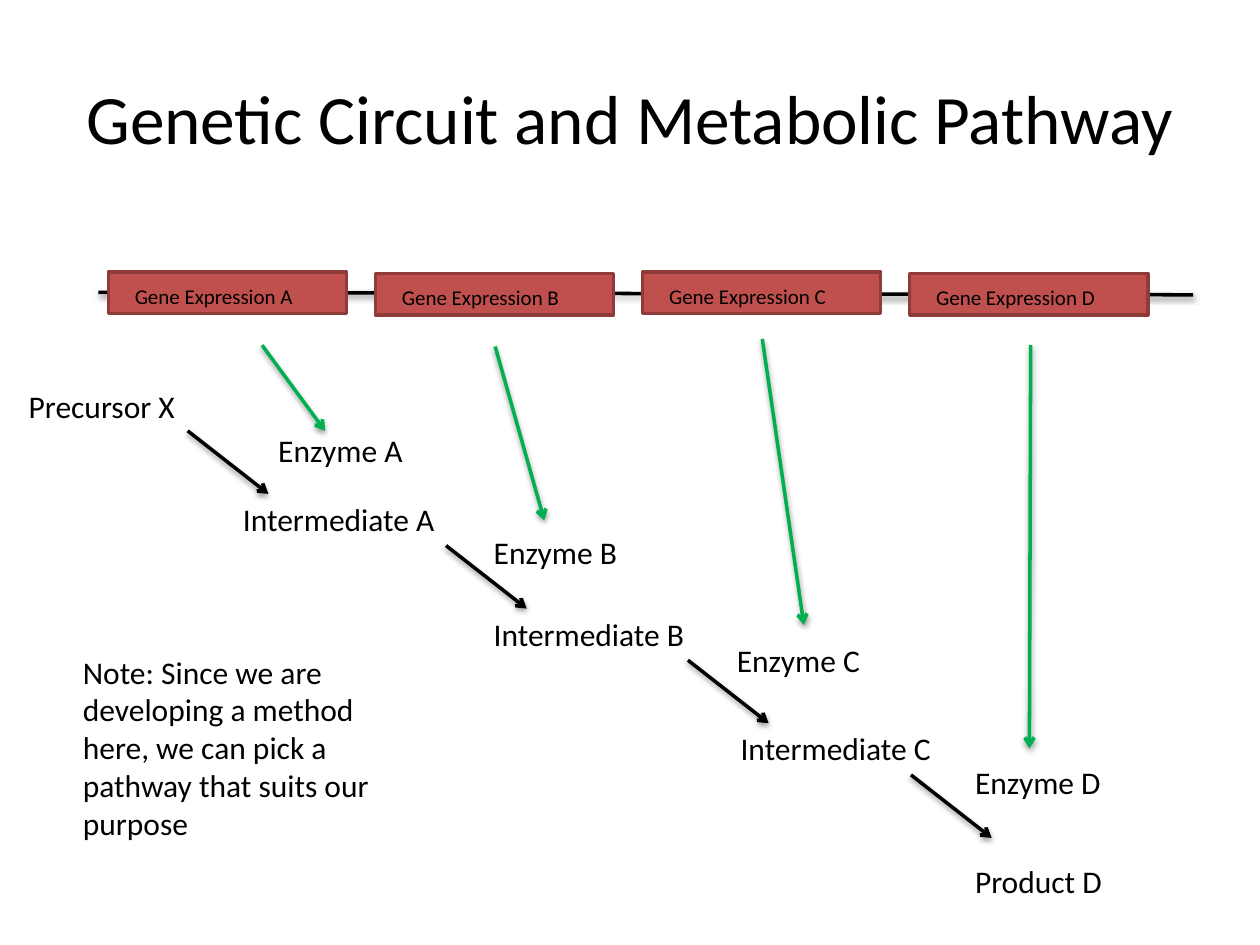
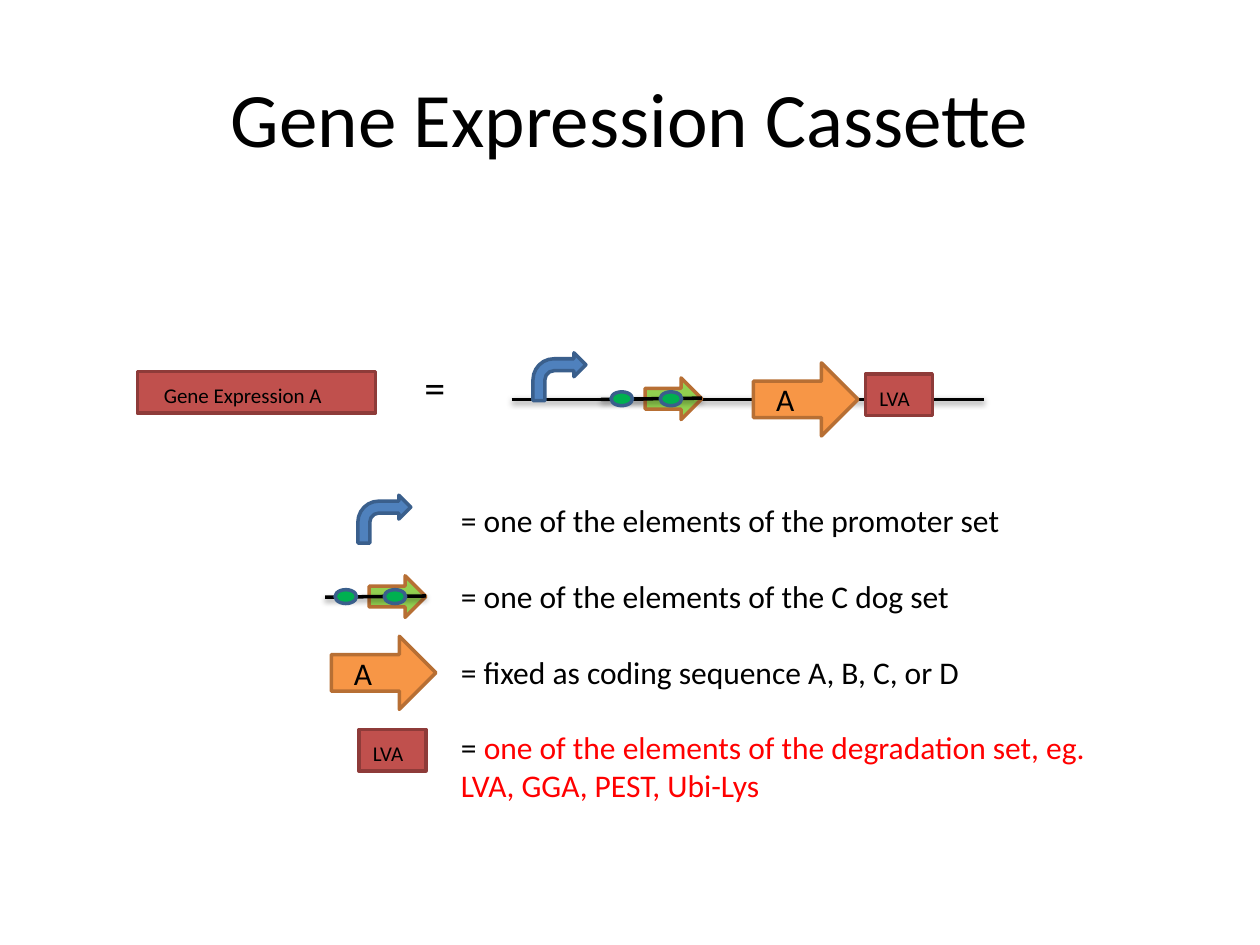
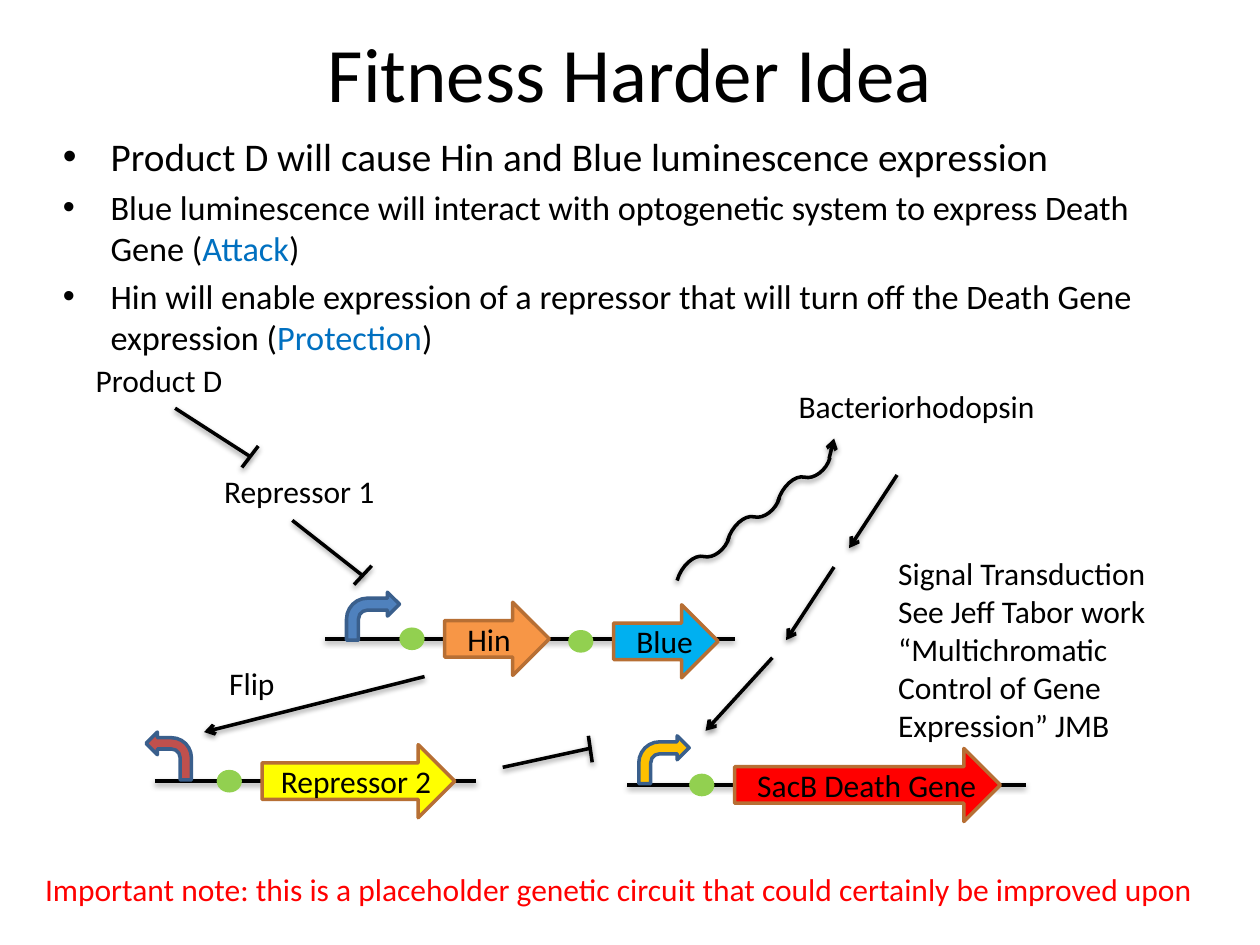
from lxml.etree import SubElement
from pptx import Presentation
from pptx.dml.color import RGBColor
from pptx.enum.shapes import MSO_CONNECTOR, MSO_SHAPE
from pptx.enum.text import MSO_ANCHOR, PP_ALIGN
from pptx.oxml.ns import qn
from pptx.util import Inches, Pt

FONT = "Calibri"
BLACK = RGBColor(0x00, 0x00, 0x00)
RED = RGBColor(0xFF, 0x00, 0x00)
BRICK = RGBColor(0xC0, 0x50, 0x4D)
BRICK_EDGE = RGBColor(0x8E, 0x3B, 0x39)
ORANGE = RGBColor(0xF7, 0x96, 0x46)
ORANGE_EDGE = RGBColor(0xB7, 0x6F, 0x34)
BLUE = RGBColor(0x4F, 0x81, 0xBD)
BLUE_EDGE = RGBColor(0x3A, 0x5F, 0x8C)
SKY = RGBColor(0x00, 0xB0, 0xF0)
LINK_BLUE = RGBColor(0x00, 0x70, 0xC0)
GREEN = RGBColor(0x00, 0xB0, 0x50)
LIME = RGBColor(0x92, 0xD0, 0x50)
YELLOW = RGBColor(0xFF, 0xFF, 0x00)
GOLD = RGBColor(0xFF, 0xC0, 0x00)


def add_box(slide, left, top, width, height, text="", kind=None, fill=None,
            edge=None, size=18, color=BLACK, inset=0.1, inset_top=0.0):
    """Add a text box, or a filled preset shape with a left-aligned label if kind is given."""
    place = [Inches(v) for v in (left, top, width, height)]
    if kind is None:
        box = slide.shapes.add_textbox(*place)
    else:
        box = slide.shapes.add_shape(kind, *place)
        box.shadow.inherit = False
        box.fill.solid()
        box.fill.fore_color.rgb = fill
        if edge is None:
            box.line.fill.background()
        else:
            box.line.color.rgb = edge
            box.line.width = Pt(2)
        frame = box.text_frame
        frame.vertical_anchor = MSO_ANCHOR.MIDDLE
        frame.margin_left, frame.margin_top = Inches(inset), Inches(inset_top)
        frame.margin_right = frame.margin_bottom = 0
    box.text_frame.word_wrap = True
    if text:
        box.text_frame.text = text
        for paragraph in box.text_frame.paragraphs:
            paragraph.alignment = PP_ALIGN.LEFT
            paragraph.font.name = FONT
            paragraph.font.size = Pt(size)
            paragraph.font.color.rgb = color
    return box


def add_line(slide, x1, y1, x2, y2, color=BLACK, arrow=False, kind=MSO_CONNECTOR.STRAIGHT):
    """Add a connector that keeps the soft shadow of the theme."""
    line = slide.shapes.add_connector(kind, Inches(x1), Inches(y1), Inches(x2), Inches(y2))
    line.line.color.rgb = color
    line.line.width = Pt(2)
    if arrow:
        SubElement(line.line._get_or_add_ln(), qn("a:tailEnd"), type="arrow")
    return line


prs = Presentation()
prs.slide_width, prs.slide_height = Inches(10), Inches(7.5)

slides = []
for title, top, size in [
    ("Genetic Circuit and Metabolic Pathway", 0.3, 39.6),
    ("Gene Expression Cassette", 0.3, 44),
    ("Fitness Harder Idea", -0.06, 44),
]:
    slide = prs.slides.add_slide(prs.slide_layouts[6])
    heading = add_box(slide, 0.5, top, 9, 1.25, title, size=size)
    heading.text_frame.vertical_anchor = MSO_ANCHOR.MIDDLE
    heading.text_frame.paragraphs[0].alignment = PP_ALIGN.CENTER
    slides.append(slide)
pathway, cassette, fitness = slides

gene_style = dict(kind=MSO_SHAPE.RECTANGLE, fill=BRICK, edge=BRICK_EDGE, size=12, inset_top=0.05)
coding_style = dict(kind=MSO_SHAPE.RIGHT_ARROW, edge=ORANGE_EDGE)
promoter_style = dict(kind=MSO_SHAPE.BENT_ARROW, edge=BLUE_EDGE)

# Slide 1: genes, their enzymes, and the chain of products
add_line(pathway, 0.78, 2.32, 9.47, 2.34)
for i, letter in enumerate("ABCD"):
    add_box(pathway, 0.86 + 2.12 * i, 2.16 + 0.01 * (i % 2), 1.89, 0.33,
            f"Gene Expression {letter}", inset=0.21, **gene_style)

for text, left, top in [
    ("Precursor X", 0.13, 3.02),
    ("Intermediate A", 1.83, 3.92),
    ("Intermediate B", 3.82, 4.83),
    ("Intermediate C", 5.78, 5.74),
    ("Product D", 7.64, 6.79),
    ("Enzyme A", 2.11, 3.37),
    ("Enzyme B", 3.82, 4.18),
    ("Enzyme C", 5.75, 5.04),
    ("Enzyme D", 7.64, 6.01),
]:
    add_box(pathway, left, top, 1.86, 0.4, text)

for i, x in enumerate([1.49, 3.54, 5.46, 7.23]):
    y = 3.42 + 0.91 * i
    add_line(pathway, x, y, x + 0.64, y + 0.5, arrow=True)
for ends in [(2.08, 2.74, 2.58, 3.42), (3.93, 2.75, 4.32, 4.13),
             (6.05, 2.69, 6.38, 4.96), (8.18, 2.74, 8.17, 5.94)]:
    add_line(pathway, *ends, color=GREEN, arrow=True)
add_box(pathway, 0.56, 5.13, 2.5, 1.62,
        "Note: Since we are developing a method here, we can pick a pathway that suits our purpose")

# Slide 2: the cassette, and the same parts again as a legend
add_box(cassette, 1.09, 2.95, 1.89, 0.33, "Gene Expression A", inset=0.21, **gene_style)
add_box(cassette, 3.27, 2.82, 0.51, 0.5, "=", size=24)
add_line(cassette, 4.06, 3.17, 7.81, 3.17)
for promoter, dog, coding, tag in [
    ((4.23, 2.8), (4.77, 3.17), (5.98, 2.88), (6.87, 2.97)),
    ((2.84, 3.93), (2.58, 4.74), (2.63, 5.05), (2.85, 5.79)),
]:
    add_box(cassette, *promoter, 0.42, 0.38, fill=BLUE, **promoter_style)
    x, y = dog
    add_box(cassette, x + 0.35, y - 0.17, 0.45, 0.33, fill=LIME, **coding_style)
    add_line(cassette, x, y, x + 0.8, y - 0.01)
    for shift in (0.47, 0.08):
        add_box(cassette, x + shift, y - 0.06, 0.17, 0.11,
                kind=MSO_SHAPE.OVAL, fill=GREEN, edge=BLUE_EDGE)
    add_box(cassette, *coding, 0.83, 0.58, "A", fill=ORANGE, inset=0.18, **coding_style)
    add_box(cassette, *tag, 0.53, 0.33, "LVA", inset=0.11, **gene_style)

legend = add_box(cassette, 3.56, 3.93, 5.31, 2.52, "\n".join([
    "= one of the elements of the promoter set",
    "= one of the elements of the C dog set",
    "= fixed as coding sequence A, B, C, or D",
    "= ",
]))
for paragraph in legend.text_frame.paragraphs:
    paragraph.space_after = Pt(21.6)
degradation = paragraph.add_run()
degradation.text = "one of the elements of the degradation set, eg. LVA, GGA, PEST, Ubi-Lys"
degradation.font.color.rgb = RED

# Slide 3: bullets above the circuit
bullets = add_box(fitness, 0.4, 1, 9, 1.59, "\n".join([
    "Product D will cause Hin and Blue luminescence expression",
    "Blue luminescence will interact with optogenetic system to express Death Gene (",
    "Hin will enable expression of a repressor that will turn off the Death Gene expression (",
]))
for paragraph, size, keyword in zip(bullets.text_frame.paragraphs, (22.4, 19.6, 19.6),
                                    ("", "Attack", "Protection")):
    paragraph.font.size = Pt(size)
    paragraph.space_before = Pt(size * 0.2)
    properties = paragraph._p.get_or_add_pPr()
    properties.set("marL", str(Inches(0.38)))
    properties.set("indent", str(Inches(-0.38)))
    bullet_font = SubElement(properties, qn("a:buFont"), typeface="Arial")
    bullet = SubElement(properties, qn("a:buChar"), char="•")
    properties.find(qn("a:defRPr")).addprevious(bullet_font)
    bullet_font.addnext(bullet)
    if keyword:
        highlight = paragraph.add_run()
        highlight.text = keyword
        highlight.font.color.rgb = LINK_BLUE
        paragraph.add_run().text = ")"

# DNA strands and inhibition lines, each closed by a short bar
for ends in [
    (2.58, 5.07, 5.83, 5.07), (4.98, 6.23, 8.14, 6.23), (1.23, 6.2, 3.78, 6.2),
    (1.39, 3.24, 1.98, 3.62), (1.92, 3.71, 2.05, 3.54),
    (2.32, 4.13, 2.88, 4.57), (2.81, 4.64, 2.95, 4.49),
    (3.99, 6.09, 4.68, 5.94), (4.7, 6.05, 4.67, 5.84),
]:
    add_line(fitness, *ends)
for ends in [
    (7.12, 3.77, 6.74, 4.35), (6.62, 4.5, 6.24, 5.08), (6.13, 5.22, 5.6, 5.8),
    (3.37, 5.37, 1.62, 5.81), (6.58, 3.64, 6.62, 3.48),
]:
    add_line(fitness, *ends, arrow=True)

# Light wave from Blue to Bacteriorhodopsin
for i in range(3):
    left, top = 5.36 + 0.4 * i, 4.28 - 0.315 * i
    wave = add_line(fitness, left + 0.44, top + 0.31, left, top, kind=MSO_CONNECTOR.CURVE)
    properties = wave._element.spPr
    properties.find(qn("a:xfrm")).set("rot", str(105 * 60000))
    geometry = properties.find(qn("a:prstGeom"))
    guides = geometry.find(qn("a:avLst"))
    if guides is None:
        guides = SubElement(geometry, qn("a:avLst"))
    SubElement(guides, qn("a:gd"), name="adj1", fmla="val 54300")

for text, left, top, width, fill, inset in [
    ("Hin", 3.53, 4.78, 0.83, ORANGE, 0.18),
    ("Blue", 4.87, 4.8, 0.83, SKY, 0.18),
    ("SacB Death Gene", 5.83, 5.94, 2.11, RED, 0.18),
    ("Repressor 2", 2.08, 5.91, 1.53, YELLOW, 0.15),
]:
    add_box(fitness, left, top, width, 0.58, text, fill=fill, inset=inset, **coding_style)
for left, top in [(3.17, 4.98), (4.51, 5), (5.47, 6.14), (1.72, 6.11)]:
    add_box(fitness, left, top, 0.2, 0.18, kind=MSO_SHAPE.OVAL, fill=LIME)
for left, top, width, fill in [(2.75, 4.7, 0.42, BLUE), (5.07, 5.84, 0.4, GOLD),
                               (1.16, 5.81, 0.36, BRICK)]:
    promoter = add_box(fitness, left, top, width, 0.38, fill=fill, **promoter_style)
promoter._element.spPr.find(qn("a:xfrm")).set("flipH", "1")

for text, left, top, width, height, color in [
    ("Product D", 0.66, 2.82, 1.39, 0.4, BLACK),
    ("Repressor 1", 1.68, 3.7, 1.68, 0.4, BLACK),
    ("Bacteriorhodopsin", 6.24, 3.02, 2.2, 0.4, BLACK),
    ("Flip", 1.72, 5.22, 0.89, 0.4, BLACK),
    ("Signal Transduction\nSee Jeff Tabor work\n“Multichromatic Control of Gene Expression” JMB",
     7.03, 4.35, 2.2, 1.62, BLACK),
    ("Important note: this is a placeholder genetic circuit that could certainly be improved upon",
     0.26, 6.86, 9.36, 0.4, RED),
]:
    add_box(fitness, left, top, width, height, text, color=color)

prs.save("out.pptx")
